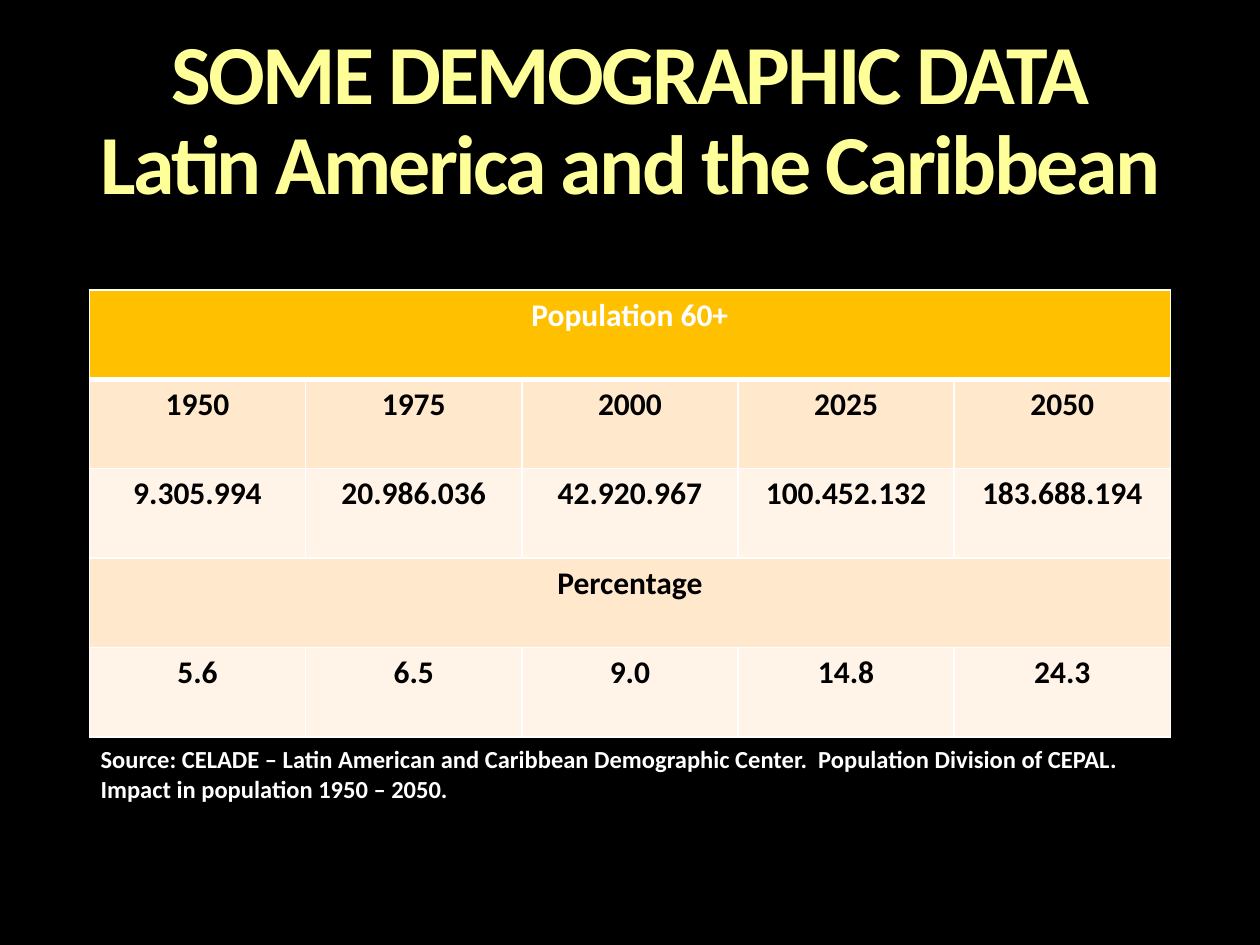
from dataclasses import dataclass

from lxml import etree
from pptx import Presentation
from pptx.dml.color import RGBColor
from pptx.enum.text import PP_ALIGN
from pptx.oxml.ns import qn
from pptx.util import Inches, Pt

LEFT, MID = PP_ALIGN.LEFT, PP_ALIGN.CENTER
WIDE, HIGH = 10, 7.5
COLS, ROW = 5, 0.71
HEX = {
    "back": "000000", "title": "FFFF99", "head": "FFC000", "dark": "FFE8CC",
    "light": "FFF4E7", "white": "FFFFFF", "black": "000000",
}


@dataclass
class Label:
    text: str
    box: tuple  # left, top, width, height as shares of the slide
    size: int
    tone: str
    align: int = LEFT
    inset: tuple = (0.1, 0.05)
    lead: float = 1.0
    track: int = 0


@dataclass
class Band:
    cells: list
    fill: str
    tone: str = "black"
    under: int = 1


def tint(name: str) -> RGBColor:
    return RGBColor.from_string(HEX[name])


def place(box: tuple) -> list:
    return [Inches(part * full) for part, full in zip(box, (WIDE, HIGH) * 2)]


def style(para, size: int, tone: str, align: int) -> None:
    para.alignment = align
    for run in para.runs:
        for key, val in {"name": "Calibri", "size": Pt(size), "bold": True}.items():
            setattr(run.font, key, val)
        run.font.color.rgb = tint(tone)


def write(slide, label: Label) -> None:
    frame = slide.shapes.add_textbox(*place(label.box)).text_frame
    across, down = map(Inches, label.inset)
    form = {"word_wrap": True, "margin_left": across, "margin_right": across,
            "margin_top": down, "margin_bottom": down}
    for key, val in form.items():
        setattr(frame, key, val)
    para = frame.paragraphs[0]
    para.text = label.text
    para.line_spacing = label.lead
    style(para, label.size, label.tone, label.align)
    if label.track:
        for run in para.runs:
            run.font._element.set("spc", str(label.track))


def edge(cell, side: str, width: int) -> None:
    props = cell._tc.get_or_add_tcPr()
    line = etree.SubElement(props, qn(f"a:ln{side}"), w=str(Pt(width)))
    fill = etree.SubElement(line, qn("a:solidFill"))
    etree.SubElement(fill, qn("a:srgbClr"), val=HEX["white"])


def draw(slide, bands: list[Band], box: tuple) -> None:
    table = slide.shapes.add_table(len(bands), COLS, *place(box)).table
    table.first_row = table.horz_banding = False
    over = 1
    for row, band in enumerate(bands):
        table.rows[row].height = Inches(ROW)
        for col in range(COLS):
            cell = table.cell(row, col)
            for side, width in zip("LRTB", (1, 1, over, band.under)):
                edge(cell, side, width)
            cell.fill.solid()
            cell.fill.fore_color.rgb = tint(band.fill)
        # A lone entry spans the whole row
        if len(band.cells) == 1:
            table.cell(row, 0).merge(table.cell(row, COLS - 1))
        for col, text in enumerate(band.cells):
            para = table.cell(row, col).text_frame.paragraphs[0]
            para.text = text
            style(para, 18, band.tone, MID)
        over = band.under


TITLE = Label("SOME DEMOGRAPHIC DATA\vLatin America and the Caribbean",
              (0.042, 0.25 / HIGH, 0.917, 1.45 / HIGH), 48, "title", MID,
              (0, 0), 0.9, -150)
SOURCE = Label("Source: CELADE – Latin American and Caribbean Demographic Center.  "
               "Population Division of CEPAL.  Impact in population 1950 – 2050.",
               (0.07, 5.86 / HIGH, 0.882, 0.57 / HIGH), 14, "white")
BANDS = [
    Band(["Population 60+"], "head", "white", 3),
    Band(["1950", "1975", "2000", "2025", "2050"], "dark"),
    Band(["9.305.994", "20.986.036", "42.920.967", "100.452.132", "183.688.194"],
         "light"),
    Band(["Percentage"], "dark"),
    Band(["5.6", "6.5", "9.0", "14.8", "24.3"], "light"),
]


def main() -> None:
    deck = Presentation()
    deck.slide_width, deck.slide_height = Inches(WIDE), Inches(HIGH)
    slide = deck.slides.add_slide(deck.slide_layouts[6])
    slide.background.fill.solid()
    slide.background.fill.fore_color.rgb = tint("back")

    # Heading, table and source line
    write(slide, TITLE)
    draw(slide, BANDS, (0.071, 2.3 / HIGH, 0.858, ROW * len(BANDS) / HIGH))
    write(slide, SOURCE)
    deck.save("out.pptx")


if __name__ == "__main__":
    main()
